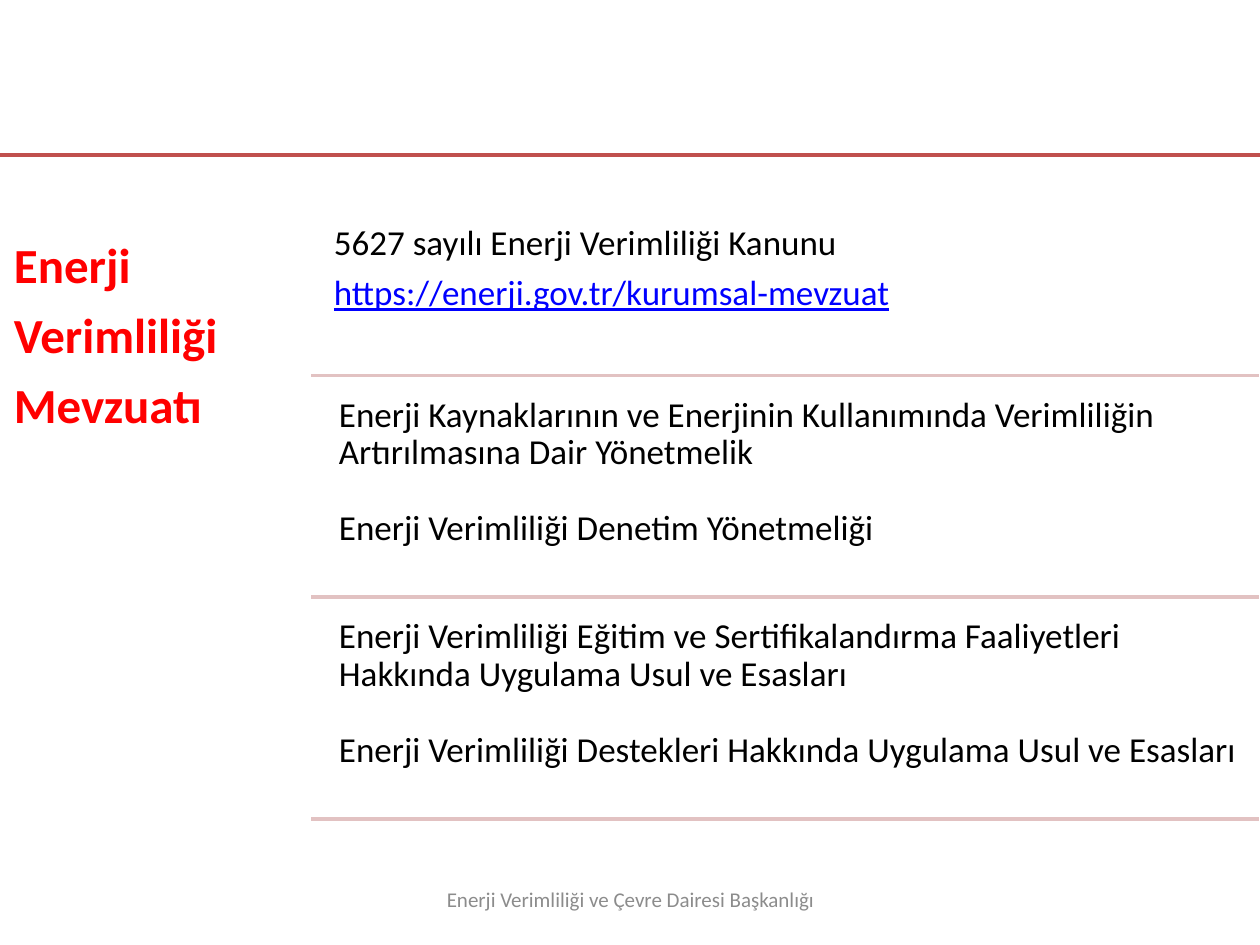
from lxml.etree import SubElement
from pptx import Presentation
from pptx.dml.color import RGBColor
from pptx.enum.shapes import MSO_CONNECTOR
from pptx.enum.text import MSO_ANCHOR, MSO_AUTO_SIZE, PP_ALIGN
from pptx.oxml.ns import qn
from pptx.util import Inches, Pt

COLORS = {
    "heading": "FF0000",
    "body": "000000",
    "link": "0000FF",
    "footer": "8C8C8C",
    "rule": "C0504D",
    "divider": "E2C2C2",
}

LINK = "https://enerji.gov.tr/kurumsal-mevzuat"
HEADING = ["Enerji", "Verimliliği", "Mevzuatı"]
# Each section: paragraphs, side inset, top inset, space between paragraphs
SECTIONS = [
    (["5627 sayılı Enerji Verimliliği Kanunu", LINK], 0.04, 0.48, 7),
    (["Enerji Kaynaklarının ve Enerjinin Kullanımında Verimliliğin "
      "Artırılmasına Dair Yönetmelik",
      "Enerji Verimliliği Denetim Yönetmeliği"], 0.08, 0.08, 21.5),
    (["Enerji Verimliliği Eğitim ve Sertifikalandırma Faaliyetleri "
      "Hakkında Uygulama Usul ve Esasları",
      "Enerji Verimliliği Destekleri Hakkında Uygulama Usul ve Esasları"],
     0.08, 0.08, 21.5),
]
SECTION_TOP, SECTION_PITCH, SECTION_HEIGHT = 1.31, 1.76, 1.67


class SlideBuilder:
    font = "Calibri"
    line_spacing = 0.9

    def __init__(self, slide):
        self.slide = slide

    def fill_text(self, shape, paragraphs, size, color, inset, top_inset,
                  gap=0, bold=False, align=PP_ALIGN.LEFT, anchor=MSO_ANCHOR.TOP):
        frame = shape.text_frame
        frame.text = "\n".join(paragraphs)
        frame.word_wrap = True
        frame.auto_size = MSO_AUTO_SIZE.NONE
        frame.vertical_anchor = anchor
        frame.margin_left = frame.margin_right = frame.margin_bottom = Inches(inset)
        frame.margin_top = Inches(top_inset)
        for index, paragraph in enumerate(frame.paragraphs):
            paragraph.alignment = align
            paragraph.line_spacing = self.line_spacing
            paragraph.space_before = Pt(gap if index else 0)
            for run in paragraph.runs:
                run.font.name = self.font
                run.font.size = Pt(size)
                run.font.bold = bold
                run.font.underline = run.text == LINK
                shade = "link" if run.text == LINK else color
                run.font.color.rgb = RGBColor.from_string(COLORS[shade])

    def title(self, left, top, width, height, paragraphs, **style):
        heading = self.slide.shapes.title
        heading.left, heading.top = Inches(left), Inches(top)
        heading.width, heading.height = Inches(width), Inches(height)
        self.fill_text(heading, paragraphs, **style)

    def text(self, left, top, width, height, paragraphs, **style):
        box = self.slide.shapes.add_textbox(
            Inches(left), Inches(top), Inches(width), Inches(height))
        self.fill_text(box, paragraphs, **style)

    def horizontal_line(self, left, right, y, color):
        line = self.slide.shapes.add_connector(
            MSO_CONNECTOR.STRAIGHT, Inches(left), Inches(y), Inches(right), Inches(y))
        line.line.color.rgb = RGBColor.from_string(COLORS[color])
        line.line.width = Pt(2)
        SubElement(line._element.spPr, qn("a:effectLst"))


def main():
    presentation = Presentation()
    presentation.slide_width, presentation.slide_height = Inches(10), Inches(7.5)
    title_only = presentation.slide_layouts[5]
    builder = SlideBuilder(presentation.slides.add_slide(title_only))

    builder.text(3.42, 6.95, 3.17, 0.4,
                 ["Enerji Verimliliği ve Çevre Dairesi Başkanlığı"],
                 size=12, color="footer", inset=0.05, top_inset=0.05,
                 align=PP_ALIGN.CENTER, anchor=MSO_ANCHOR.MIDDLE)
    builder.horizontal_line(-0.01, 10, 1.23, "rule")
    builder.title(-0.01, 1.23, 2.48, 5.35, HEADING, size=28, color="heading",
                  inset=0.12, top_inset=0.68, gap=9.8, bold=True)

    for index, (paragraphs, inset, top_inset, gap) in enumerate(SECTIONS):
        top = SECTION_TOP + index * SECTION_PITCH
        builder.text(2.61, top, 7.38, SECTION_HEIGHT, paragraphs, size=20,
                     color="body", inset=inset, top_inset=top_inset, gap=gap)
        builder.horizontal_line(2.47, 9.99, top + SECTION_HEIGHT, "divider")

    presentation.save("out.pptx")


if __name__ == "__main__":
    main()
